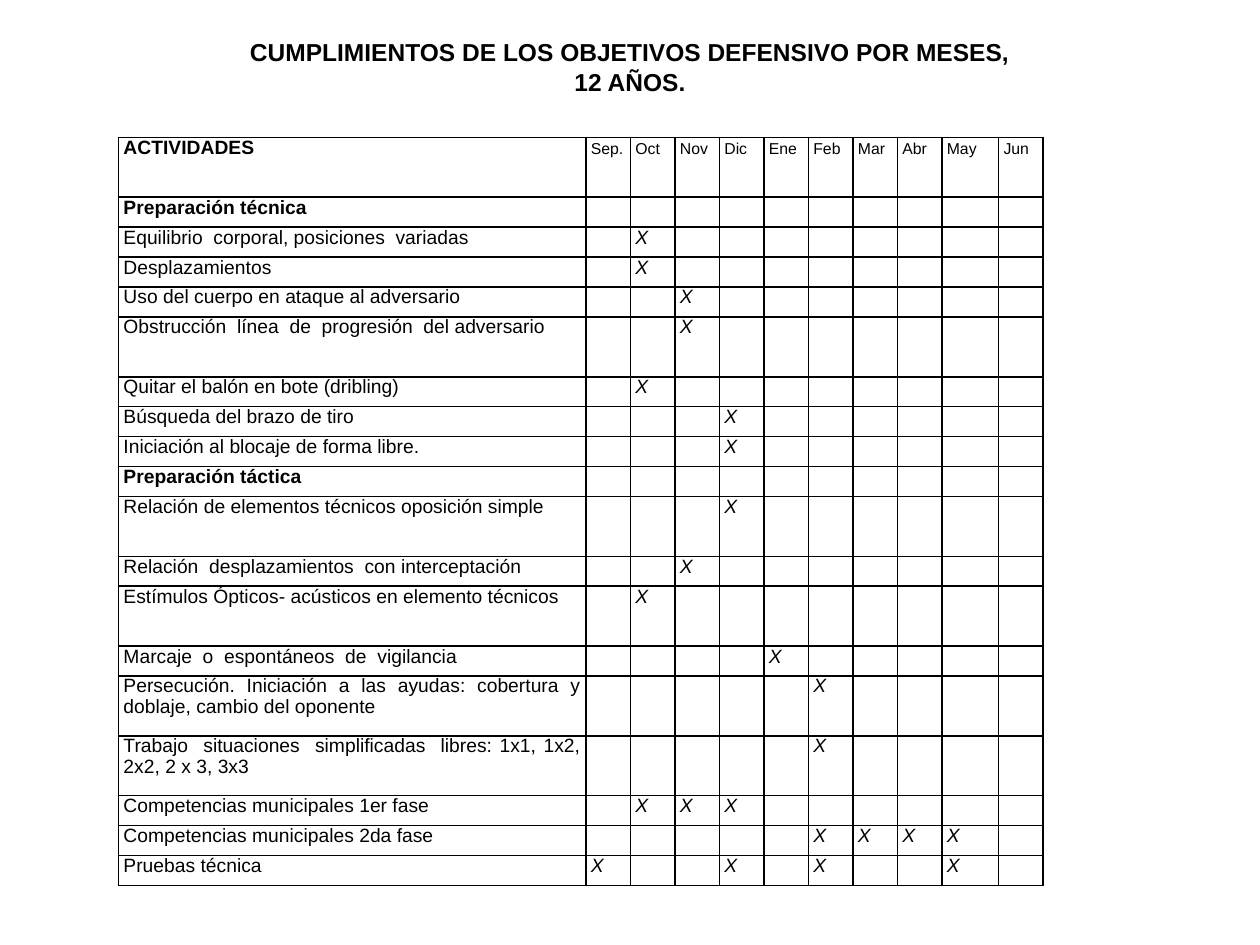
from lxml.etree import SubElement as Sub
from pptx import Presentation
from pptx.dml.color import RGBColor
from pptx.enum.text import MSO_ANCHOR as Anchor, PP_ALIGN as Align
from pptx.oxml.ns import qn
from pptx.util import Inches, Pt

BLACK = RGBColor(0, 0, 0)
FACE = "Arial"
TITLE = ["CUMPLIMIENTOS DE LOS OBJETIVOS DEFENSIVO POR MESES,", "12 AÑOS."]
MONTHS = ["Sep.", "Oct", "Nov", "Dic", "Ene", "Feb", "Mar", "Abr", "May", "Jun"]
HEADS = ("ACTIVIDADES", "Preparación técnica", "Preparación táctica")
TASKS = [
    ("Preparación técnica", "", 1),
    ("Equilibrio  corporal, posiciones  variadas", "Oct", 1),
    ("Desplazamientos", "Oct", 1),
    ("Uso del cuerpo en ataque al adversario", "Nov", 1),
    ("Obstrucción  línea  de  progresión  del adversario", "Nov", 2),
    ("Quitar el balón en bote (dribling)", "Oct", 1),
    ("Búsqueda del brazo de tiro", "Dic", 1),
    ("Iniciación al blocaje de forma libre.", "Dic", 1),
    ("Preparación táctica", "", 1),
    ("Relación de elementos técnicos oposición simple", "Dic", 2),
    ("Relación  desplazamientos  con interceptación", "Nov", 1),
    ("Estímulos Ópticos- acústicos en elemento técnicos", "Oct", 2),
    ("Marcaje  o  espontáneos  de  vigilancia", "Ene", 1),
    ("Persecución. Iniciación a las ayudas: cobertura y doblaje, "
     "cambio del oponente", "Feb", 2),
    ("Trabajo  situaciones  simplificadas  libres: 1x1, 1x2, 2x2, 2 x 3, 3x3",
     "Feb", 2),
    ("Competencias municipales 1er fase", "Oct Nov Dic", 1),
    ("Competencias municipales 2da fase", "Feb Mar Abr May", 1),
    ("Pruebas técnica", "Sep. Dic Feb May", 1),
]
LEFT, TOP, WIDE, HIGH = 0.94, 1.09, 7.34, 5.94
FIRST, MAY = 3.71, 0.45


def style(para, size, bold=False, slant=False):
    font = para.font
    font.name, font.size, font.color.rgb = FACE, Pt(size), BLACK
    font.bold, font.italic = bold, slant


def frame(cell):
    props = cell._tc.get_or_add_tcPr()
    for side in ("lnL", "lnR", "lnT", "lnB"):
        line = Sub(props, qn(f"a:{side}"), w=str(Pt(1)))
        fill = Sub(line, qn("a:solidFill"))
        Sub(fill, qn("a:srgbClr"), val=str(BLACK))
    cell.fill.background()


def write(cell, text, size, bold, slant):
    frame(cell)
    cell.margin_left = cell.margin_right = Inches(0.04)
    cell.margin_top = cell.margin_bottom = 0
    cell.text = text
    para = cell.text_frame.paragraphs[0]
    para.alignment, para.line_spacing = Align.JUSTIFY, Pt(12)
    style(para, size, bold, slant)


deck = Presentation()
deck.slide_width, deck.slide_height = Inches(10), Inches(7.5)
slide = deck.slides.add_slide(deck.slide_layouts[6])

box = slide.shapes.add_textbox(0, Inches(0.28), deck.slide_width, Inches(0.5))
body = box.text_frame
body.word_wrap = False
body.vertical_anchor = Anchor.MIDDLE
body.text = "\n".join(TITLE)
for para in body.paragraphs:
    para.alignment = Align.CENTER
    style(para, 14, True)

rows = [("ACTIVIDADES", MONTHS, 2)]
for name, when, units in TASKS:
    rows.append((name, ["X" if m in when.split() else "" for m in MONTHS], units))

grid = slide.shapes.add_table(
    len(rows), len(MONTHS) + 1,
    Inches(LEFT), Inches(TOP), Inches(WIDE), Inches(HIGH)).table
grid.first_row = grid.horz_banding = False

month = (WIDE - FIRST - MAY) / (len(MONTHS) - 1)
widths = [FIRST] + [MAY if m == "May" else month for m in MONTHS]
for col, width in zip(grid.columns, widths):
    col.width = Inches(width)

unit = HIGH / sum(units for _, _, units in rows)
for r, (name, marks, units) in enumerate(rows):
    grid.rows[r].height = Inches(unit * units)
    write(grid.cell(r, 0), name, 11, name in HEADS, False)
    for c, mark in enumerate(marks, 1):
        write(grid.cell(r, c), mark, 11 if r else 9, False, mark == "X")

deck.save("out.pptx")
